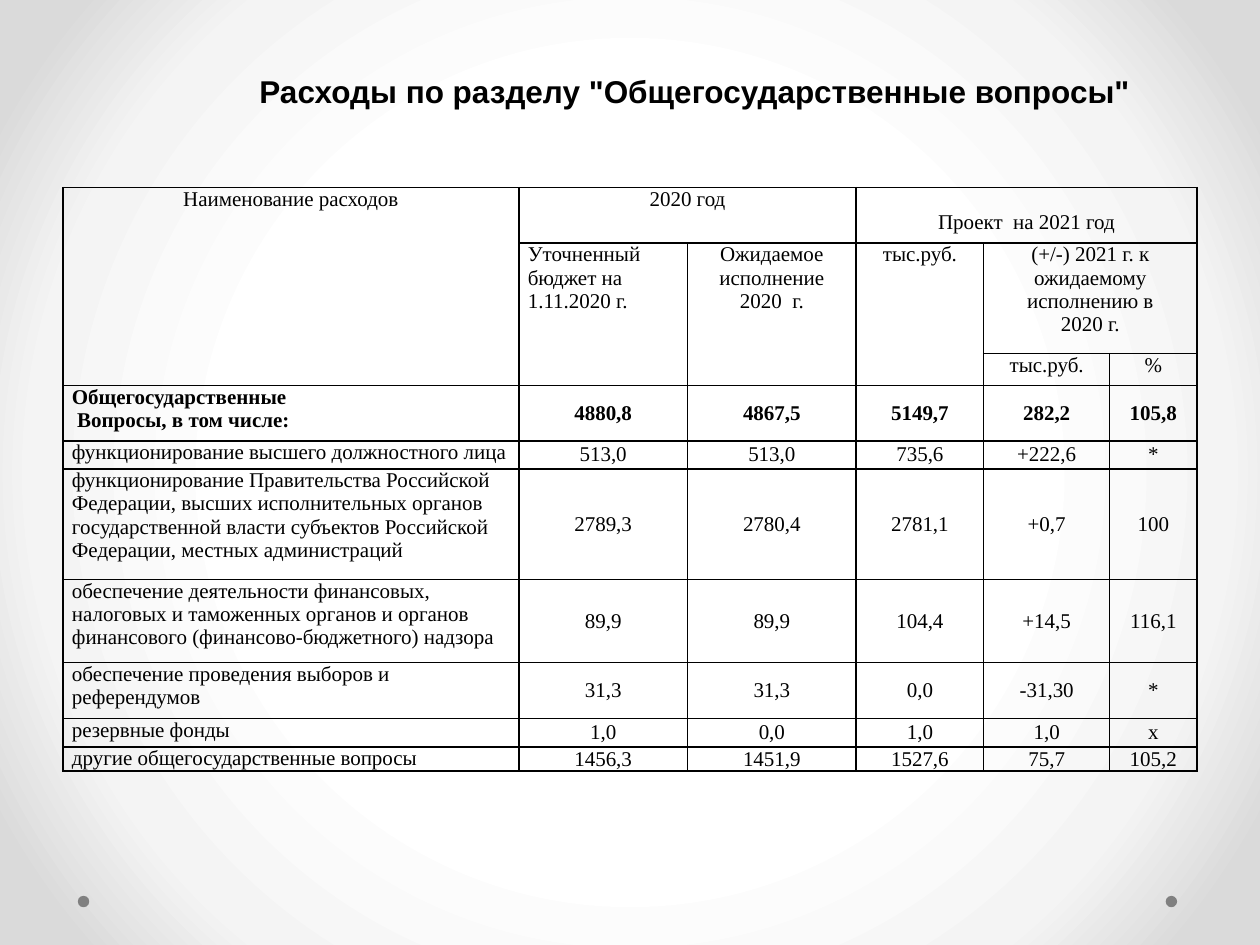
from pptx import Presentation
from pptx.dml.color import RGBColor
from pptx.enum.shapes import MSO_SHAPE
from pptx.enum.text import MSO_ANCHOR as Anchor, PP_ALIGN as Align
from pptx.oxml import parse_xml
from pptx.oxml.ns import nsdecls
from pptx.util import Cm, Pt

BLACK = RGBColor(0x00, 0x00, 0x00)
GREY = RGBColor(0x80, 0x80, 0x80)
WHITE = RGBColor(0xFF, 0xFF, 0xFF)
PALE = RGBColor(0xF4, 0xF4, 0xF4)
SILVER = RGBColor(0xDA, 0xDA, 0xDA)

COLUMN_WIDTHS = [9.19, 3.4, 3.4, 2.57, 2.54, 1.76]
ROW_HEIGHTS = [1.12, 2.23, 0.64, 1.12, 0.56, 2.23, 1.68, 1.12, 0.58, 0.48]

# (row, column, rows spanned, columns spanned, text)
HEADINGS = [
    (0, 0, 3, 1, "Наименование расходов"),
    (0, 1, 1, 2, "2020 год"),
    (0, 3, 1, 3, "Проект  на 2021 год"),
    (1, 1, 2, 1, "Уточненный бюджет на 1.11.2020 г."),
    (1, 2, 2, 1, "Ожидаемое\nисполнение\n2020  г."),
    (1, 3, 2, 1, "тыс.руб."),
    (1, 4, 1, 2, "(+/-) 2021 г. к ожидаемому\nисполнению в\n2020 г."),
    (2, 4, 1, 1, "тыс.руб."),
    (2, 5, 1, 1, "%"),
]
EXPENSES = [
    ("Общегосударственные\n Вопросы, в том числе:",
     "4880,8", "4867,5", "5149,7", "282,2", "105,8"),
    ("функционирование высшего должностного лица",
     "513,0", "513,0", "735,6", "+222,6", "*"),
    ("функционирование Правительства Российской Федерации, высших "
     "исполнительных органов государственной власти субъектов Российской "
     "Федерации, местных администраций",
     "2789,3", "2780,4", "2781,1", "+0,7", "100"),
    ("обеспечение деятельности финансовых, налоговых и таможенных органов "
     "и органов финансового (финансово-бюджетного) надзора",
     "89,9", "89,9", "104,4", "+14,5", "116,1"),
    ("обеспечение проведения выборов и референдумов",
     "31,3", "31,3", "0,0", "-31,30", "*"),
    ("резервные фонды", "1,0", "0,0", "1,0", "1,0", "х"),
    ("другие общегосударственные вопросы",
     "1456,3", "1451,9", "1527,6", "75,7", "105,2"),
]


class BudgetSlide:
    """Holds the text style and the slide being filled."""

    title_font, title_size = "Arial", Pt(18)
    table_font, table_size = "Times New Roman", Pt(12)

    def __init__(self, deck):
        self.slide = deck.slides.add_slide(deck.slide_layouts[5])

    def radial_background(self, stops):
        marks = "".join(
            f'<a:gs pos="{percent * 1000}"><a:srgbClr val="{color}"/></a:gs>'
            for percent, color in stops)
        self.slide.element.cSld.insert(0, parse_xml(
            f'<p:bg {nsdecls("p", "a")}><p:bgPr><a:gradFill rotWithShape="1">'
            f'<a:gsLst>{marks}</a:gsLst><a:path path="circle">'
            '<a:fillToRect l="50000" t="50000" r="50000" b="50000"/></a:path>'
            '</a:gradFill><a:effectLst/></p:bgPr></p:bg>'))

    def dot(self, left, top, size):
        dot = self.slide.shapes.add_shape(
            MSO_SHAPE.OVAL, Cm(left), Cm(top), Cm(size), Cm(size))
        dot.shadow.inherit = False
        dot.fill.solid()
        dot.fill.fore_color.rgb = GREY
        dot.line.fill.background()

    def format_text(self, frame, font, size, align, bold):
        for paragraph in frame.paragraphs:
            paragraph.alignment = align
            for run in paragraph.runs:
                run.font.name, run.font.size = font, size
                run.font.bold = bold
                run.font.color.rgb = BLACK

    def title(self, text, left, top, width, height, indent):
        title = self.slide.shapes.title
        title.left, title.top = Cm(left), Cm(top)
        title.width, title.height = Cm(width), Cm(height)
        frame = title.text_frame
        frame.text = text
        frame.margin_left = Cm(indent)
        frame.vertical_anchor = Anchor.BOTTOM
        self.format_text(frame, self.title_font, self.title_size,
                         Align.CENTER, True)

    def table(self, left, top, widths, heights):
        table = self.slide.shapes.add_table(
            len(heights), len(widths), Cm(left), Cm(top),
            Cm(sum(widths)), Cm(sum(heights))).table
        table.first_row = table.horz_banding = False
        for column, width in zip(table.columns, widths):
            column.width = Cm(width)
        for row, height in zip(table.rows, heights):
            row.height = Cm(height)
        for cell in table.iter_cells():
            self.outline(cell)
            cell.fill.background()
            cell.margin_left = cell.margin_right = Cm(0.18)
            cell.margin_top = cell.margin_bottom = 0
        return table

    def outline(self, cell):
        properties = cell._tc.get_or_add_tcPr()
        for side in "LRTB":
            properties.append(parse_xml(
                f'<a:ln{side} {nsdecls("a")} w="{Pt(1)}"><a:solidFill>'
                f'<a:srgbClr val="{BLACK}"/></a:solidFill></a:ln{side}>'))

    def fill_cell(self, cell, text, align=Align.CENTER, anchor=Anchor.TOP,
                  bold=False):
        cell.text_frame.text = text
        cell.vertical_anchor = anchor
        self.format_text(cell.text_frame, self.table_font, self.table_size,
                         align, bold)


def main():
    deck = Presentation()
    deck.slide_width, deck.slide_height = Cm(25.4), Cm(19.05)
    budget = BudgetSlide(deck)
    budget.radial_background([(50, WHITE), (76, PALE), (92, SILVER)])
    for left in (23.5, 1.57):
        budget.dot(left, 18.06, 0.23)
    budget.title('Расходы по разделу "Общегосударственные вопросы"',
                 1.3, 0.74, 22.86, 1.6, indent=2.8)

    expenses = budget.table(1.27, 3.78, COLUMN_WIDTHS, ROW_HEIGHTS)
    for row, column, row_span, column_span, text in HEADINGS:
        cell = expenses.cell(row, column)
        if row_span * column_span > 1:
            cell.merge(expenses.cell(row + row_span - 1,
                                     column + column_span - 1))
        align = Align.LEFT if (row, column) == (1, 1) else Align.CENTER
        budget.fill_cell(cell, text, align)
    expenses.cell(0, 3).margin_top = Cm(0.47)

    for row, (name, *amounts) in enumerate(EXPENSES, start=3):
        is_total = row == 3
        budget.fill_cell(expenses.cell(row, 0), name, Align.LEFT,
                         bold=is_total)
        for column, amount in enumerate(amounts, start=1):
            budget.fill_cell(expenses.cell(row, column), amount,
                             anchor=Anchor.MIDDLE, bold=is_total)
    deck.save("out.pptx")


if __name__ == "__main__":
    main()
